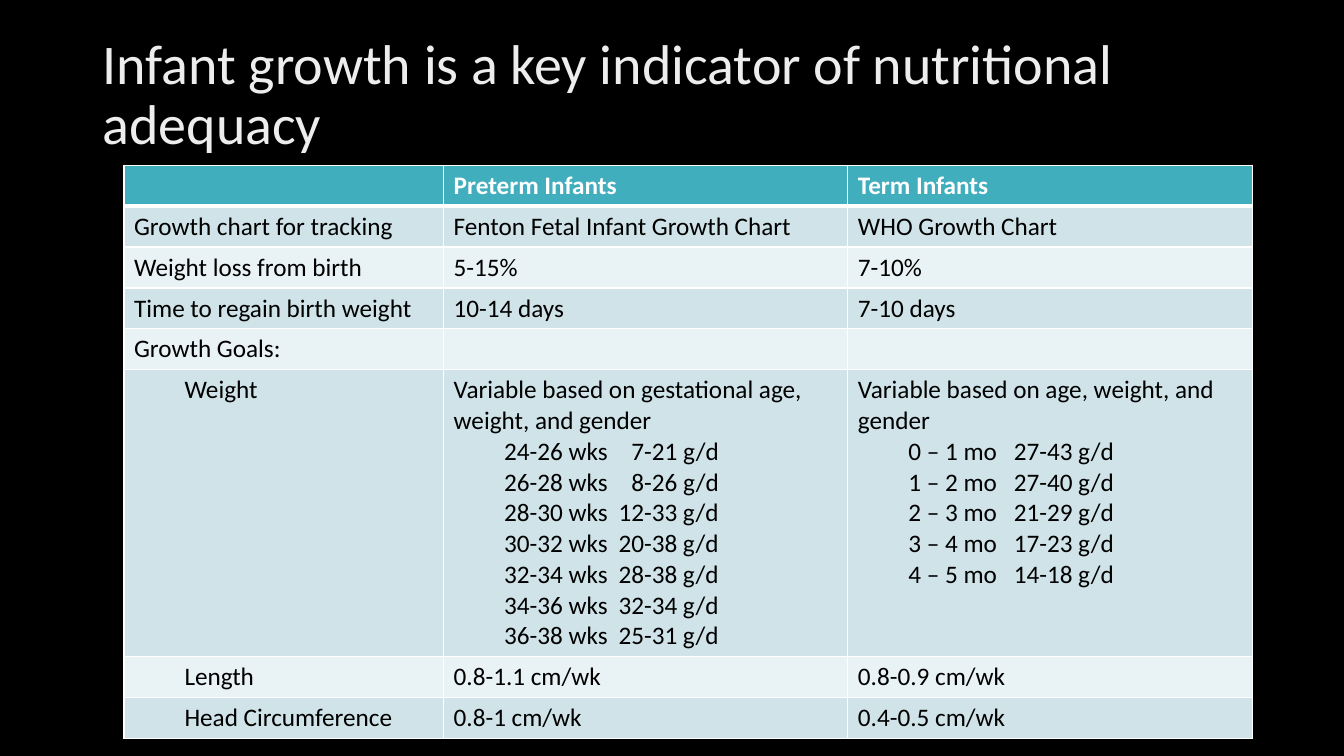
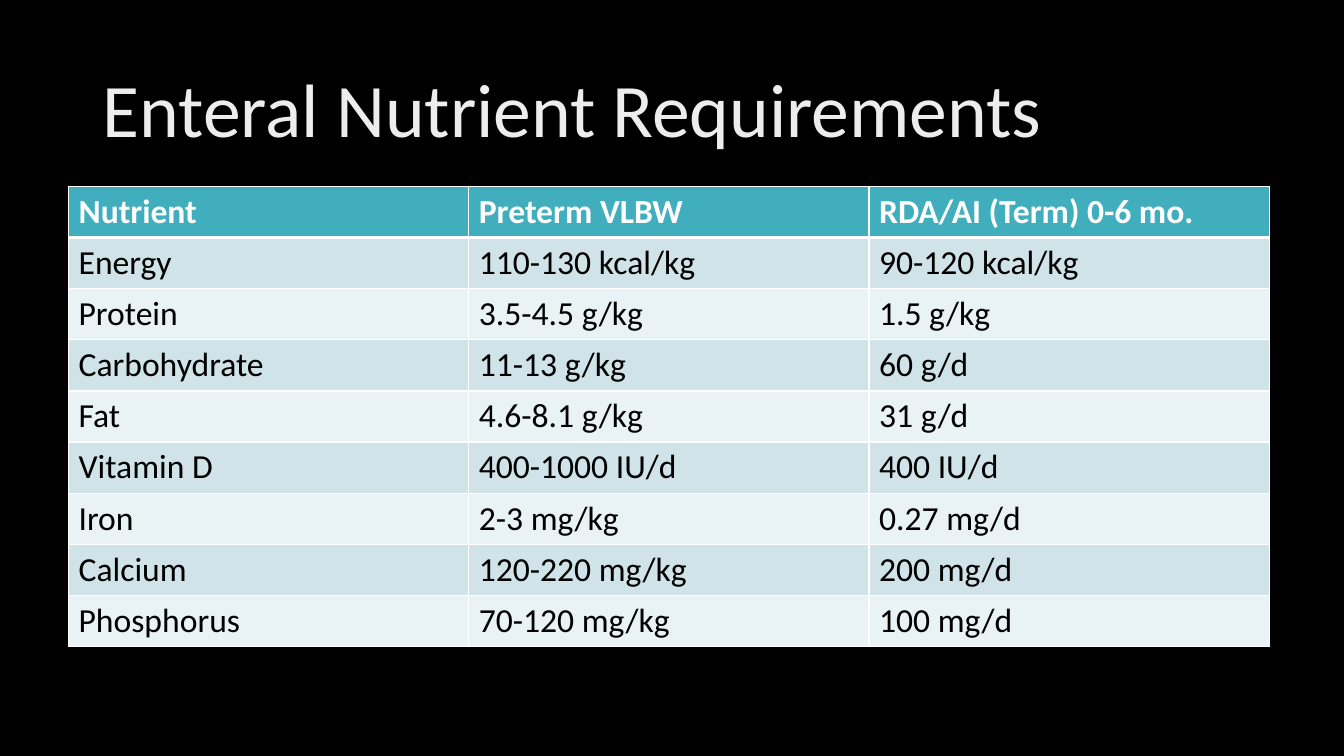
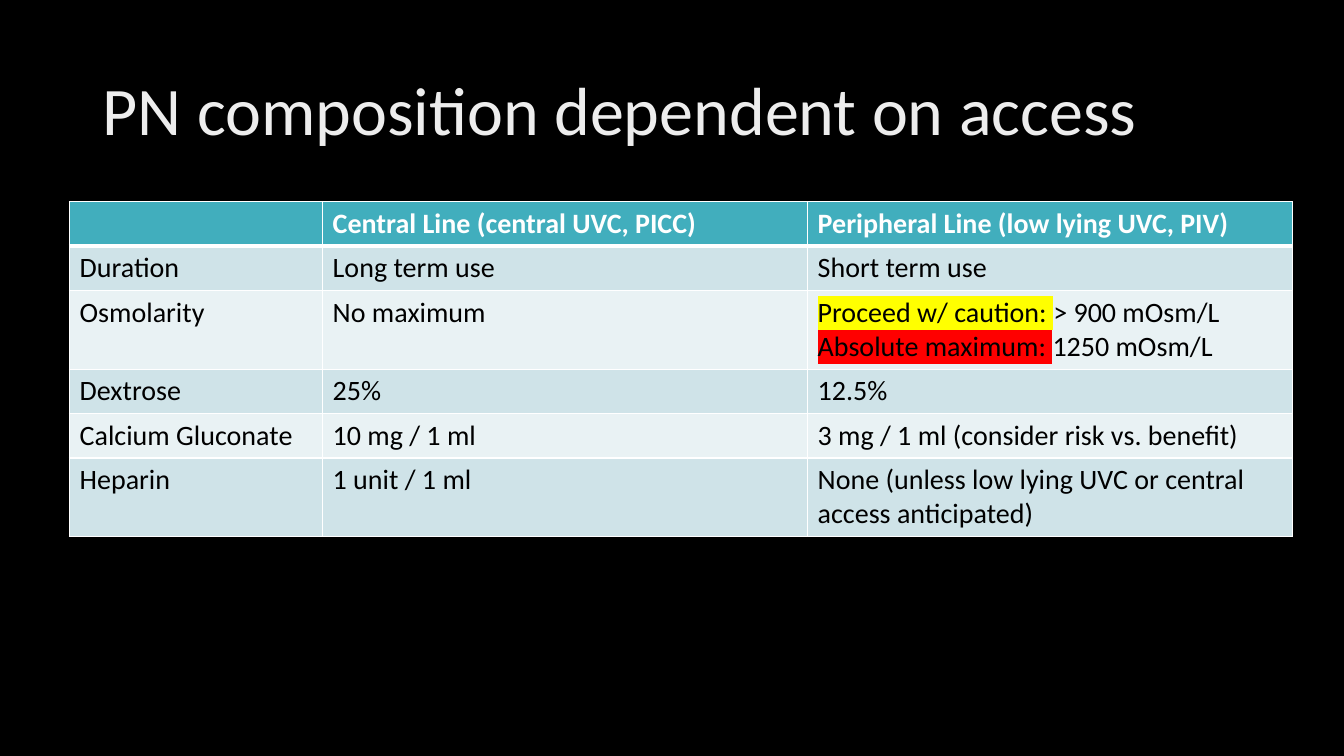
"""Build three slides of tables on infant growth and nutrition."""
from dataclasses import dataclass

from pptx import Presentation
from pptx.dml.color import RGBColor
from pptx.enum.text import MSO_ANCHOR, MSO_AUTO_SIZE, PP_ALIGN
from pptx.oxml.ns import qn
from pptx.presentation import Presentation as Deck
from pptx.slide import Slide
from pptx.table import _Cell as Cell
from pptx.text.text import Font, _Paragraph as Paragraph
from pptx.util import Inches, Pt
from lxml.etree import SubElement

FONT = "Calibri"
BLACK, WHITE = "000000", "FFFFFF"
TITLE_COLOR = "EDEDED"
HEADER_FILL = "41AEBD"
BAND_FILLS = ("E9F2F4", "CFE3E8")
YELLOW, RED = "FFFF00", "FF0000"
TITLE_LEFT, TITLE_WIDTH, TITLE_HEIGHT = 0.92, 11.5, 1.45
THIN, THICK = 1, 3
RATE_INDENT = 0.5
TITLE_ONLY = 5


@dataclass(frozen=True)
class Line:
    """One paragraph of a cell, with an optional highlighted lead."""
    text: str
    lead: str = ""
    lead_color: str = ""
    indent: float = 0
    rate_end: float = 0


Entry = str | tuple[Line, ...]


@dataclass(frozen=True)
class TableSlide:
    """A titled slide holding one table."""
    title: str
    title_size: float
    title_top: float
    left: float
    top: float
    columns: tuple[float, ...]
    heights: tuple[float, ...]
    text_size: int
    rows: tuple[tuple[Entry, ...], ...]


def color(value: str) -> RGBColor:
    """Turn a hex string into a colour."""
    return RGBColor.from_string(value)


def indented(text: str) -> tuple[Line, ...]:
    """Return a single indented line."""
    return (Line(text, indent=0.5),)


def rates(intro: str, rate_end: float, *pairs: tuple[str, str]) -> tuple[Line, ...]:
    """Return an intro followed by periods and their weight gains."""
    return (Line(intro), *(Line(f"\t{period}\t{gain}", rate_end=rate_end)
                           for period, gain in pairs))


GROWTH = TableSlide(
    "Infant growth is a key indicator of nutritional adequacy", 40, 0.23,
    1.23, 1.64, (3.17, 4.01, 4.01), (0.4,) * 5 + (2.84,) + (0.4,) * 2, 18,
    (
        ("", "Preterm Infants", "Term Infants"),
        ("Growth chart for tracking", "Fenton Fetal Infant Growth Chart", "WHO Growth Chart"),
        ("Weight loss from birth", "5-15%", "7-10%"),
        ("Time to regain birth weight", "10-14 days", "7-10 days"),
        ("Growth Goals:", "", ""),
        (
            indented("Weight"),
            rates("Variable based on gestational age, weight, and gender", 2.63,
                  ("24-26 wks", "7-21 g/d"), ("26-28 wks", "8-26 g/d"),
                  ("28-30 wks", "12-33 g/d"), ("30-32 wks", "20-38 g/d"),
                  ("32-34 wks", "28-38 g/d"), ("34-36 wks", "32-34 g/d"),
                  ("36-38 wks", "25-31 g/d")),
            rates("Variable based on age, weight, and gender", 2.54,
                  ("0 – 1 mo", "27-43 g/d"), ("1 – 2 mo", "27-40 g/d"),
                  ("2 – 3 mo", "21-29 g/d"), ("3 – 4 mo", "17-23 g/d"),
                  ("4 – 5 mo", "14-18 g/d")),
        ),
        (indented("Length"), "0.8-1.1 cm/wk", "0.8-0.9 cm/wk"),
        (indented("Head Circumference"), "0.8-1 cm/wk", "0.4-0.5 cm/wk"),
    ),
)

NUTRIENTS = TableSlide(
    "Enteral Nutrient Requirements", 54, 0.4,
    0.68, 1.85, (3.97,) * 3, (0.5,) * 9, 24,
    (
        ("Nutrient", "Preterm VLBW", "RDA/AI (Term) 0-6 mo."),
        ("Energy", "110-130 kcal/kg", "90-120 kcal/kg"),
        ("Protein", "3.5-4.5 g/kg", "1.5 g/kg"),
        ("Carbohydrate", "11-13 g/kg", "60 g/d"),
        ("Fat", "4.6-8.1 g/kg", "31 g/d"),
        ("Vitamin D", "400-1000 IU/d", "400 IU/d"),
        ("Iron", "2-3 mg/kg", "0.27 mg/d"),
        ("Calcium", "120-220 mg/kg", "200 mg/d"),
        ("Phosphorus", "70-120 mg/kg", "100 mg/d"),
    ),
)

ACCESS = TableSlide(
    "PN composition dependent on access", 48.6, 0.4,
    0.69, 2, (2.51, 4.81, 4.81), (0.43, 0.43, 0.77, 0.43, 0.43, 0.77), 20,
    (
        ("", "Central Line (central UVC, PICC)", "Peripheral Line (low lying UVC, PIV)"),
        ("Duration", "Long term use", "Short term use"),
        ("Osmolarity", "No maximum",
         (Line("> 900 mOsm/L", "Proceed w/ caution: ", YELLOW),
          Line("1250 mOsm/L", "Absolute maximum: ", RED))),
        ("Dextrose", "25%", "12.5%"),
        ("Calcium Gluconate", "10 mg / 1 ml", "3 mg / 1 ml (consider risk vs. benefit)"),
        ("Heparin", "1 unit / 1 ml",
         "None (unless low lying UVC or central access anticipated)"),
    ),
)


def style_font(font: Font, size: float, hex_color: str, bold: bool = False) -> None:
    """Apply the shared typeface with a size, colour and weight."""
    font.name = FONT
    font.size = Pt(size)
    font.bold = bold
    font.color.rgb = color(hex_color)


def add_title(slide: Slide, content: TableSlide) -> None:
    """Place and format the title placeholder."""
    title = slide.shapes.title
    title.left, title.top = Inches(TITLE_LEFT), Inches(content.title_top)
    title.width, title.height = Inches(TITLE_WIDTH), Inches(TITLE_HEIGHT)
    frame = title.text_frame
    frame.text = content.title
    frame.word_wrap = True
    frame.auto_size = MSO_AUTO_SIZE.NONE
    frame.vertical_anchor = MSO_ANCHOR.MIDDLE
    paragraph = frame.paragraphs[0]
    paragraph.alignment = PP_ALIGN.LEFT
    paragraph.line_spacing = 0.9
    style_font(paragraph.font, content.title_size, TITLE_COLOR)


def add_border(cell: Cell, side: str, width: float) -> None:
    """Draw one white cell border."""
    edge = SubElement(cell._tc.get_or_add_tcPr(), qn(f"a:ln{side}"), w=str(Pt(width)))
    fill = SubElement(edge, qn("a:solidFill"))
    SubElement(fill, qn("a:srgbClr"), val=WHITE)


def write_line(paragraph: Paragraph, line: Line) -> None:
    """Write a line with its indent, tab stops and highlight."""
    properties = paragraph._p.get_or_add_pPr()
    if line.indent:
        properties.set("marL", str(Inches(line.indent)))
        properties.set("indent", "0")
    if line.rate_end:
        stops = SubElement(properties, qn("a:tabLst"))
        for position, align in ((RATE_INDENT, "l"), (line.rate_end, "r")):
            SubElement(stops, qn("a:tab"), pos=str(Inches(position)), algn=align)
    if line.lead:
        lead = paragraph.add_run()
        lead.text = line.lead
        highlight = SubElement(lead._r.get_or_add_rPr(), qn("a:highlight"))
        SubElement(highlight, qn("a:srgbClr"), val=line.lead_color)
    if line.text:
        paragraph.add_run().text = line.text


def fill_cell(cell: Cell, entry: Entry, row: int, size: int) -> None:
    """Write and format one cell according to its row."""
    header = row == 0
    widths = {"L": THIN, "R": THIN, "T": THICK if row == 1 else THIN,
              "B": THICK if header else THIN}
    for side, width in widths.items():
        add_border(cell, side, width)
    cell.fill.solid()
    cell.fill.fore_color.rgb = color(HEADER_FILL if header else BAND_FILLS[row % 2])
    lines = (Line(entry),) if isinstance(entry, str) else entry
    frame = cell.text_frame
    for index, line in enumerate(lines):
        paragraph = frame.add_paragraph() if index else frame.paragraphs[0]
        write_line(paragraph, line)
        style_font(paragraph.font, size, WHITE if header else BLACK, header)


def add_data_table(slide: Slide, content: TableSlide) -> None:
    """Add the table with its column widths and row heights."""
    table = slide.shapes.add_table(
        len(content.rows), len(content.columns), Inches(content.left), Inches(content.top),
        Inches(sum(content.columns)), Inches(sum(content.heights))).table
    for column, width in zip(table.columns, content.columns):
        column.width = Inches(width)
    for row, height in zip(table.rows, content.heights):
        row.height = Inches(height)
    for row_index, entries in enumerate(content.rows):
        for column_index, entry in enumerate(entries):
            fill_cell(table.cell(row_index, column_index), entry, row_index, content.text_size)


def add_table_slide(deck: Deck, content: TableSlide) -> None:
    """Add one black slide with its title and table."""
    slide = deck.slides.add_slide(deck.slide_layouts[TITLE_ONLY])
    slide.background.fill.solid()
    slide.background.fill.fore_color.rgb = color(BLACK)
    add_title(slide, content)
    add_data_table(slide, content)


def main() -> None:
    """Build and save the presentation."""
    deck = Presentation()
    deck.slide_width, deck.slide_height = Inches(13.33), Inches(7.5)
    for content in (GROWTH, NUTRIENTS, ACCESS):
        add_table_slide(deck, content)
    deck.save("out.pptx")


if __name__ == "__main__":
    main()
